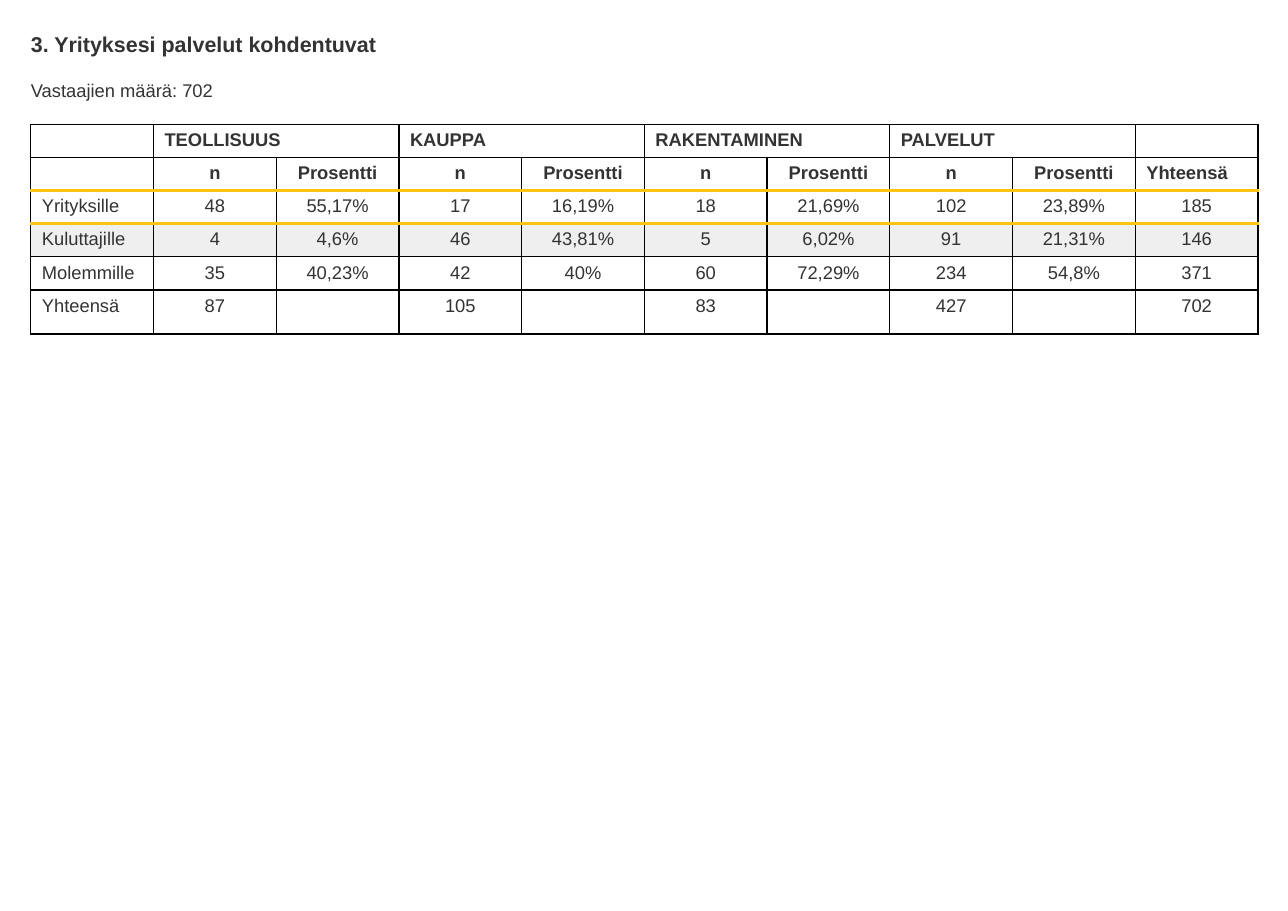
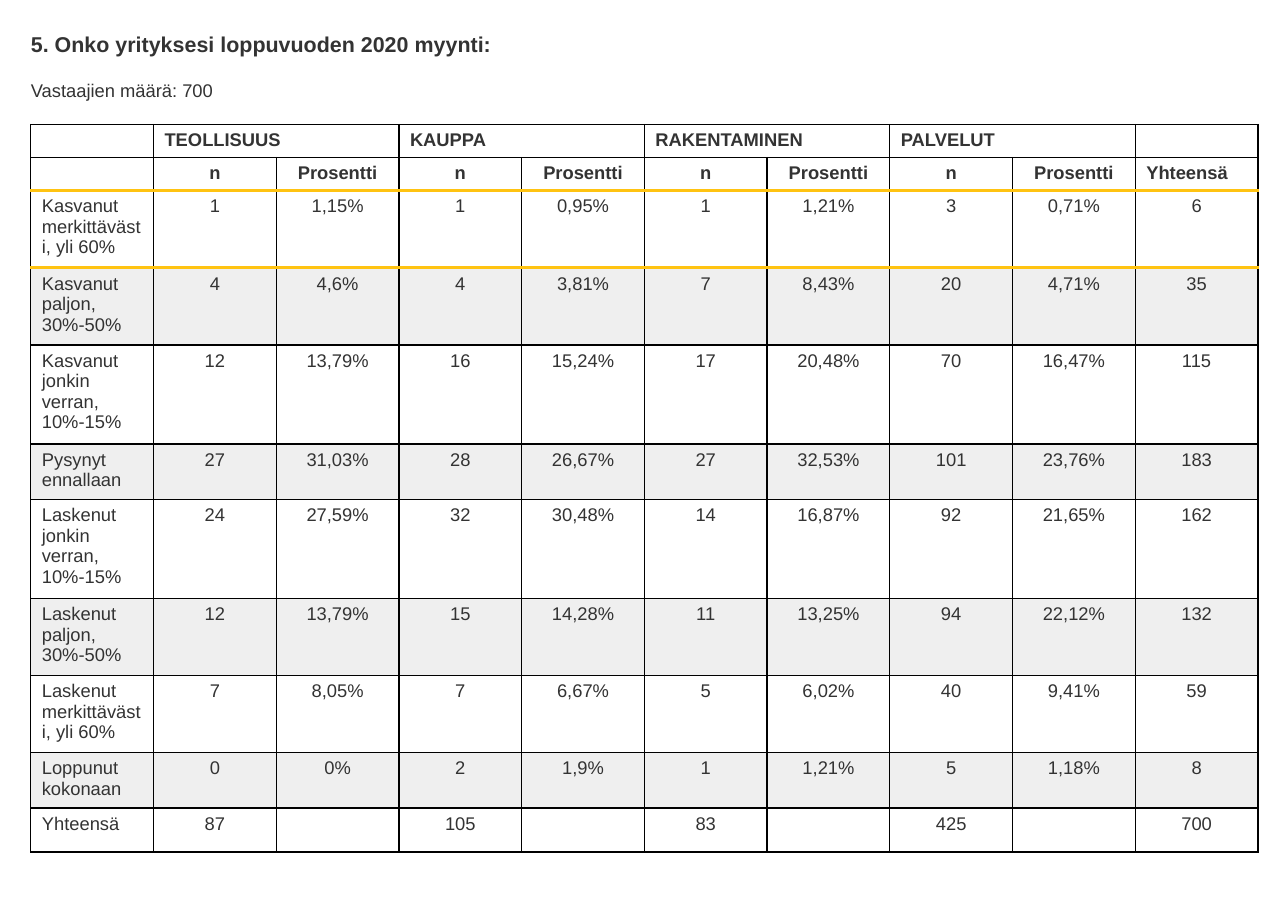
from lxml import etree
from pptx import Presentation
from pptx.dml.color import RGBColor
from pptx.enum import text
from pptx.oxml import ns
from pptx.util import Inches, Pt

FONT = "Arial"
INK, BLACK, ACCENT, BAND = "333333", "000000", "FFC311", "EFEFEF"
LEFT, WIDTH, TABLE_WIDTH = 0.28, 11.15, 11.14
SECTORS = ["TEOLLISUUS", "KAUPPA", "RAKENTAMINEN", "PALVELUT"]
TOTAL = "Yhteensä"
HEADER_ROWS = 2
COLUMNS = 2 * len(SECTORS) + 2

# Each answer: number of label lines, label, then n and percentage per sector, and the total.
SERVICE_TARGETS = [
    (1, "Yrityksille", "48 55,17% 17 16,19% 18 21,69% 102 23,89% 185"),
    (1, "Kuluttajille", "4 4,6% 46 43,81% 5 6,02% 91 21,31% 146"),
    (1, "Molemmille", "35 40,23% 42 40% 60 72,29% 234 54,8% 371"),
]
SALES_CHANGES = [
    (3, "Kasvanut merkittävästi, yli 60%", "1 1,15% 1 0,95% 1 1,21% 3 0,71% 6"),
    (3, "Kasvanut paljon, 30%-50%", "4 4,6% 4 3,81% 7 8,43% 20 4,71% 35"),
    (4, "Kasvanut jonkin verran, 10%-15%", "12 13,79% 16 15,24% 17 20,48% 70 16,47% 115"),
    (2, "Pysynyt ennallaan", "27 31,03% 28 26,67% 27 32,53% 101 23,76% 183"),
    (4, "Laskenut jonkin verran, 10%-15%", "24 27,59% 32 30,48% 14 16,87% 92 21,65% 162"),
    (3, "Laskenut paljon, 30%-50%", "12 13,79% 15 14,28% 11 13,25% 94 22,12% 132"),
    (3, "Laskenut merkittävästi, yli 60%", "7 8,05% 7 6,67% 5 6,02% 40 9,41% 59"),
    (2, "Loppunut kokonaan", "0 0% 2 1,9% 1 1,21% 5 1,18% 8"),
]


def color(hex_code):
    return RGBColor.from_string(hex_code)


def format_paragraph(paragraph, size, bold=False, alignment=text.PP_ALIGN.LEFT):
    paragraph.alignment = alignment
    font = paragraph.font
    font.name, font.size, font.bold = FONT, Pt(size), bold
    font.color.rgb = color(INK)


def fill_text_shape(shape, wording, top, height, size, bold=False):
    shape.left, shape.top = Inches(LEFT), Inches(top)
    shape.width, shape.height = Inches(WIDTH), Inches(height)
    frame = shape.text_frame
    frame.margin_left = frame.margin_right = frame.margin_top = frame.margin_bottom = 0
    frame.vertical_anchor = text.MSO_ANCHOR.TOP
    frame.word_wrap = True
    frame.auto_size = text.MSO_AUTO_SIZE.SHAPE_TO_FIT_TEXT
    frame.text = wording
    format_paragraph(frame.paragraphs[0], size, bold)


def add_border(cell, side, hex_code, width):
    """Draw one cell edge; side is L, R, T or B."""
    properties = cell._tc.get_or_add_tcPr()
    line = etree.SubElement(properties, ns.qn(f"a:ln{side}"), w=str(Pt(width)))
    fill = etree.SubElement(line, ns.qn("a:solidFill"))
    etree.SubElement(fill, ns.qn("a:srgbClr"), val=hex_code)


def format_cell(cell, row, column, banded):
    accent_edges = (HEADER_ROWS, HEADER_ROWS + 1)
    for side, edge in (("L", None), ("R", None), ("T", row), ("B", row + 1)):
        add_border(cell, side, *((ACCENT, 2) if edge in accent_edges else (BLACK, 1)))
    if banded:
        cell.fill.solid()
        cell.fill.fore_color.rgb = color(BAND)
    else:
        cell.fill.background()
    is_header = row < HEADER_ROWS
    left_aligned = row == 0 or column == 0 or (is_header and column == COLUMNS - 1)
    alignment = text.PP_ALIGN.LEFT if left_aligned else text.PP_ALIGN.CENTER
    paragraph = cell.text_frame.paragraphs[0]
    format_paragraph(paragraph, 12, is_header, alignment)
    if not cell.text:
        # An empty cell takes its line height from the end-of-paragraph size.
        paragraph._p.get_or_add_endParaRPr().set("sz", "1200")


def add_answer_table(slide, answers, totals):
    sector_row = [""]
    total_row = [TOTAL]
    for sector, total in zip(SECTORS, totals):
        sector_row += [sector, ""]
        total_row += [total, ""]
    rows = [
        sector_row + [""],
        [""] + ["n", "Prosentti"] * len(SECTORS) + [TOTAL],
        *([label, *values.split()] for _, label, values in answers),
        total_row + [totals[-1]],
    ]
    line_counts = [1] * HEADER_ROWS + [lines for lines, _, _ in answers]
    heights = [0.1 + 0.2 * lines for lines in line_counts] + [0.4]

    frame = slide.shapes.add_table(len(rows), COLUMNS, Inches(LEFT), Inches(1.13),
                                   Inches(TABLE_WIDTH), Inches(sum(heights)))
    table = frame.table
    table.first_row = table.horz_banding = False
    for row, (values, height) in enumerate(zip(rows, heights)):
        table.rows[row].height = Inches(height)
        banded = HEADER_ROWS <= row < len(rows) - 1 and (row - HEADER_ROWS) % 2 == 1
        for column, value in enumerate(values):
            cell = table.cell(row, column)
            cell.text = value
            format_cell(cell, row, column, banded)
    for column in range(1, COLUMNS - 1, 2):
        table.cell(0, column).merge(table.cell(0, column + 1))


def add_question_slide(presentation, question, answers, totals):
    slide = presentation.slides.add_slide(presentation.slide_layouts.get_by_name("Title Only"))
    fill_text_shape(slide.shapes.title, question, 0.28, 0.23, 14, bold=True)
    respondents = slide.shapes.add_textbox(0, 0, 0, 0)
    fill_text_shape(respondents, f"Vastaajien määrä: {totals[-1]}", 0.72, 0.2, 12)
    add_answer_table(slide, answers, totals)


def main():
    presentation = Presentation()
    presentation.slide_width, presentation.slide_height = Inches(11.69), Inches(8.27)
    add_question_slide(presentation, "3. Yrityksesi palvelut kohdentuvat",
                       SERVICE_TARGETS, ["87", "105", "83", "427", "702"])
    add_question_slide(presentation, "5. Onko yrityksesi loppuvuoden 2020 myynti:",
                       SALES_CHANGES, ["87", "105", "83", "425", "700"])
    presentation.save("out.pptx")


if __name__ == "__main__":
    main()
